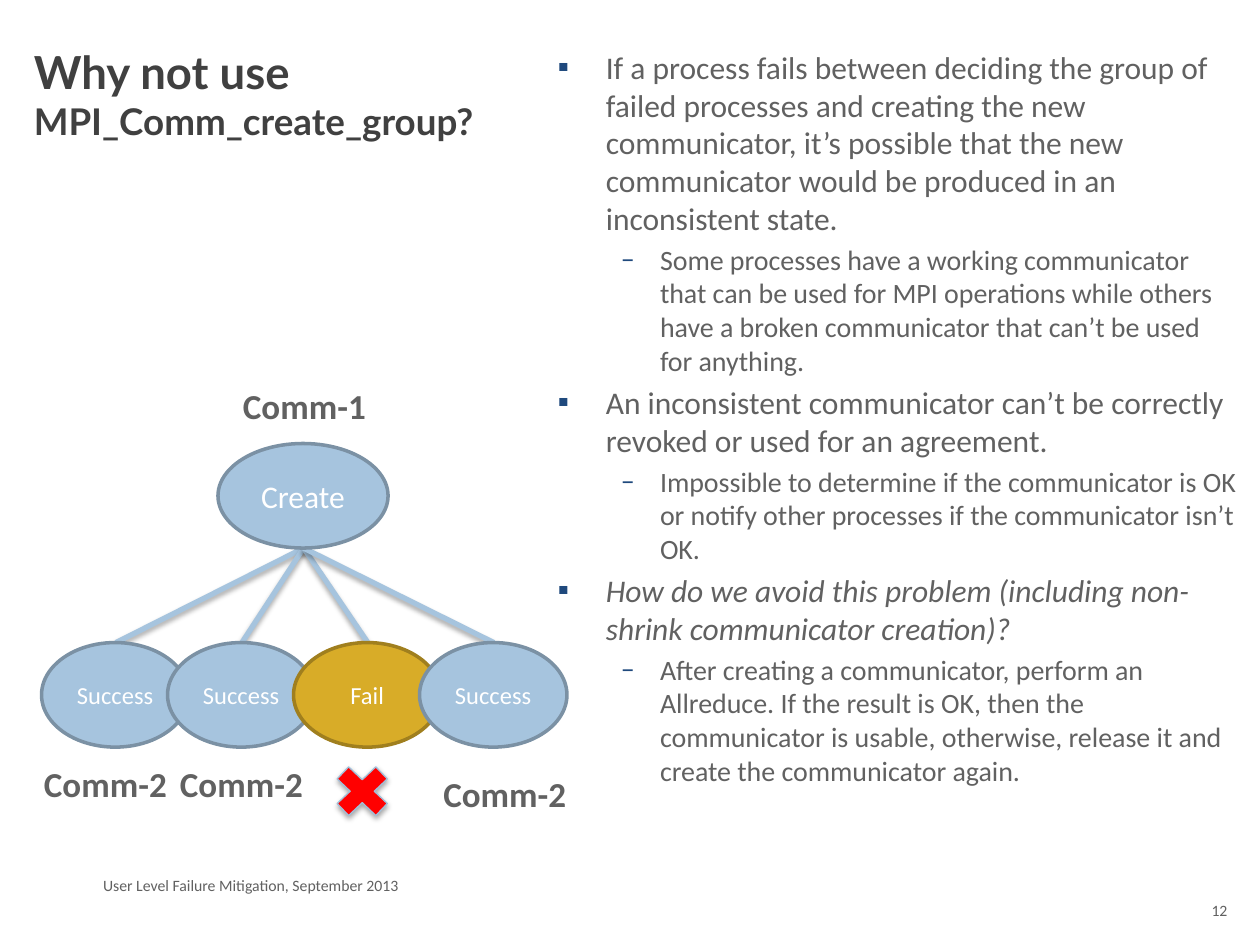
from lxml import etree
from pptx import Presentation
from pptx import util as u
from pptx.dml.color import RGBColor
from pptx.enum import shapes, text
from pptx.oxml import ns

COLORS = {
    "title": "404040", "body": "616161", "bullet": "1F497D", "white": "FFFFFF",
    "blue": "A6C4DE", "blue_edge": "7B91A4", "gold": "D8AC28", "gold_edge": "A07F1E",
    "red": "FF0000", "red_edge": "A1C0DA", "shadow": "000000",
}
# Outline levels: bullet, left margin, hanging indent, size, space before
LEVELS = [("▪", 0.38, 0.38, 18, 3.6), ("–", 0.81, 0.31, 16, 3.2)]

BULLETS = [
    (0, False, "If a process fails between deciding the group of failed processes and creating "
               "the new communicator, it’s possible that the new communicator would be produced "
               "in an inconsistent state."),
    (1, False, "Some processes have a working communicator that can be used for MPI operations "
               "while others have a broken communicator that can’t be used for anything."),
    (0, False, "An inconsistent communicator can’t be correctly revoked or used for an agreement."),
    (1, False, "Impossible to determine if the communicator is OK or notify other processes if "
               "the communicator isn’t OK."),
    (0, True, "How do we avoid this problem (including non-shrink communicator creation)?"),
    (1, False, "After creating a communicator, perform an Allreduce. If the result is OK, then "
               "the communicator is usable, otherwise, release it and create the communicator again."),
]


def rgb(name):
    return RGBColor.from_string(COLORS[name])


def child(parent, tag, **attributes):
    return etree.SubElement(parent, ns.qn(tag), {k: str(v) for k, v in attributes.items()})


class SlideBuilder:
    """Holds the style and the slide being built."""

    base = {"name": "Calibri", "size": 18, "bold": False, "italic": False, "color": "body"}

    def __init__(self, slide):
        self.slide = slide

    def style(self, font, **changes):
        values = {**self.base, **changes}
        font.color.rgb = rgb(values.pop("color"))
        values["size"] = u.Pt(values["size"])
        for key, value in values.items():
            setattr(font, key, value)

    def shadow(self, shape):
        effects = child(shape._element.spPr, "a:effectLst")
        outer = child(effects, "a:outerShdw", blurRad=u.Pt(3.1), dist=u.Pt(1.8),
                      dir=90 * 60000, rotWithShape=0)
        color = child(outer, "a:srgbClr", val=COLORS["shadow"])
        child(color, "a:alpha", val=35000)

    def text_box(self, box, runs=(), align=text.PP_ALIGN.LEFT, wrap=True):
        shape = self.slide.shapes.add_textbox(*map(u.Inches, box))
        frame = shape.text_frame
        frame.word_wrap = wrap
        if not wrap:
            frame.auto_size = text.MSO_AUTO_SIZE.SHAPE_TO_FIT_TEXT
        paragraph = frame.paragraphs[0]
        paragraph.alignment = align
        for words, changes in runs:
            run = paragraph.add_run()
            run.text = words
            self.style(run.font, **changes)
        return frame

    def outline(self, box, items):
        frame = self.text_box(box)
        for index, (level, italic, words) in enumerate(items):
            mark, margin, hanging, size, before = LEVELS[level]
            paragraph = frame.add_paragraph() if index else frame.paragraphs[0]
            paragraph.level = level
            paragraph.space_before = u.Pt(before if index else 0)
            properties = paragraph._p.get_or_add_pPr()
            properties.set("marL", str(u.Inches(margin)))
            properties.set("indent", str(-u.Inches(hanging)))
            child(child(properties, "a:buClr"), "a:srgbClr", val=COLORS["bullet"])
            child(properties, "a:buFont", typeface="Calibri")
            child(properties, "a:buChar", char=mark)
            run = paragraph.add_run()
            run.text = words
            self.style(run.font, size=size, italic=italic)

    def line(self, start, end):
        connector = self.slide.shapes.add_connector(
            shapes.MSO_CONNECTOR.STRAIGHT, *map(u.Inches, (*start, *end)))
        connector.line.color.rgb = rgb("blue")
        connector.line.width = u.Pt(3)
        self.shadow(connector)

    def shape(self, kind, box, fill, edge, width):
        shape = self.slide.shapes.add_shape(kind, *map(u.Inches, box))
        shape.fill.solid()
        shape.fill.fore_color.rgb = rgb(fill)
        shape.line.color.rgb = rgb(edge)
        shape.line.width = u.Pt(width)
        return shape

    def node(self, box, words, size, fill="blue"):
        shape = self.shape(shapes.MSO_SHAPE.OVAL, box, fill, fill + "_edge", 2)
        shape.shadow.inherit = False
        frame = shape.text_frame
        frame.word_wrap = False
        frame.vertical_anchor = text.MSO_ANCHOR.MIDDLE
        paragraph = frame.paragraphs[0]
        paragraph.alignment = text.PP_ALIGN.CENTER
        run = paragraph.add_run()
        run.text = words
        self.style(run.font, size=size, color="white")

    def label(self, left, top, words):
        self.text_box((left, top, 1.19, 0.44), [(words, {"size": 20, "bold": True})], wrap=False)

    def cross(self, box):
        self.shadow(self.shape(shapes.MSO_SHAPE.MATH_MULTIPLY, box, "red", "red_edge", 0.75))


def main():
    presentation = Presentation()
    presentation.slide_width, presentation.slide_height = u.Inches(10), u.Inches(7.5)
    builder = SlideBuilder(presentation.slides.add_slide(presentation.slide_layouts[6]))

    # Title, outline and footer
    heading = {"name": "Lato", "bold": True, "color": "title"}
    builder.text_box((0.17, 0.3, 3.83, 1.62), [
        ("Why not use ", {**heading, "size": 26}),
        ("MPI_Comm_create_group?", {**heading, "size": 21})])
    builder.outline((4.33, 0.33, 5.59, 6.4), BULLETS)
    builder.text_box((0.72, 6.9, 6.5, 0.25),
                     [("User Level Failure Mitigation, September 2013", {"size": 9})])
    builder.text_box((9.42, 7.1, 0.42, 0.4), [("12", {"size": 9})], text.PP_ALIGN.RIGHT)

    # Tree: one root with four results an inch apart
    results = [("Success", "blue"), ("Success", "blue"), ("Fail", "gold"), ("Success", "blue")]
    for index in range(len(results)):
        builder.line((2.41, 4.35), (0.92 + index, 5.1))
    builder.node((1.73, 3.52, 1.35, 0.83), "Create", 18)
    for index, (words, fill) in enumerate(results):
        builder.node((0.33 + index, 5.1, 1.17, 0.83), words, 14, fill)

    # Communicator labels and failure mark
    builder.label(1.83, 3, "Comm-1")
    for left, top in [(0.25, 6), (1.33, 6), (3.42, 6.08)]:
        builder.label(left, top, "Comm-2")
    builder.cross((2.58, 6, 0.59, 0.56))

    presentation.save("out.pptx")


if __name__ == "__main__":
    main()
